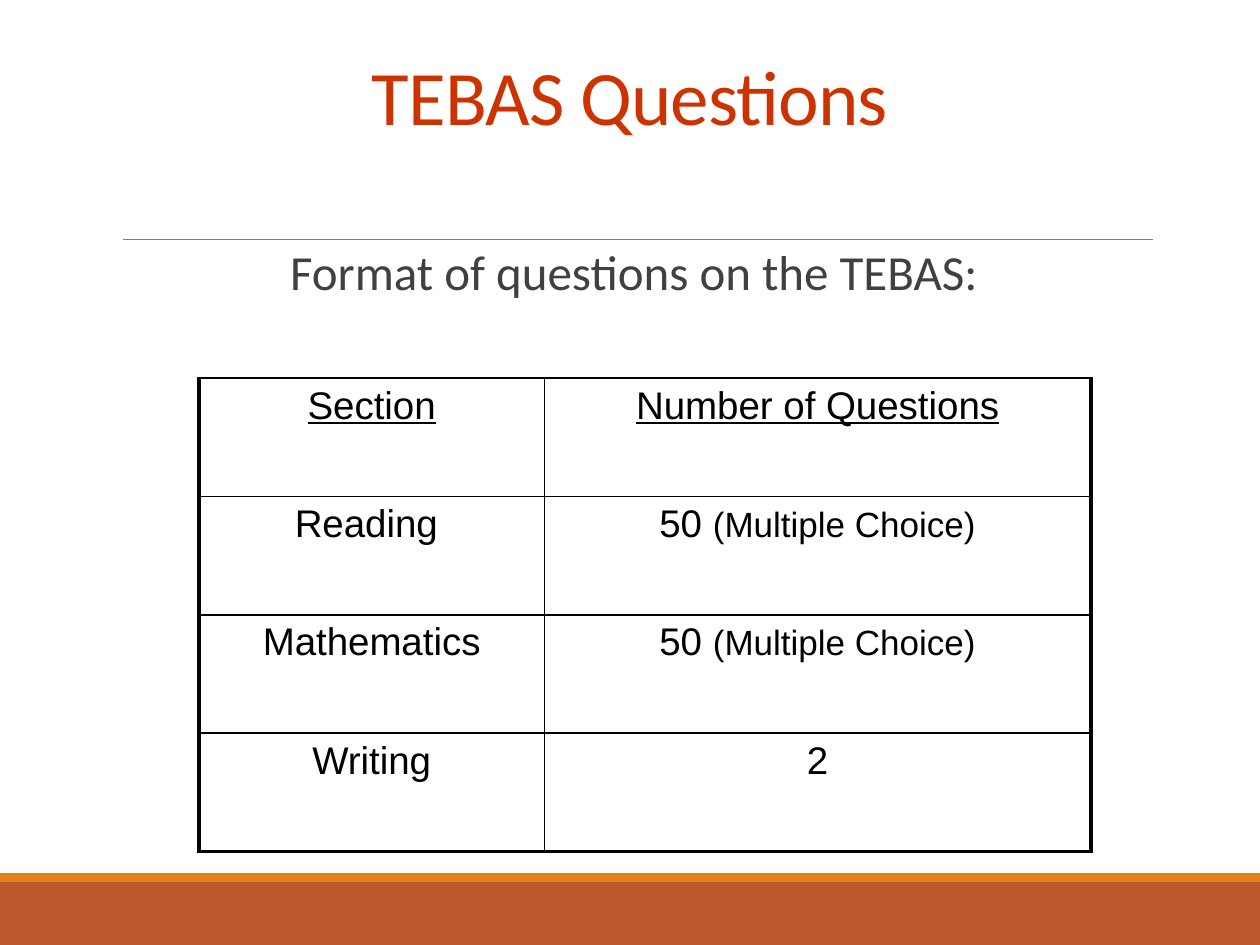
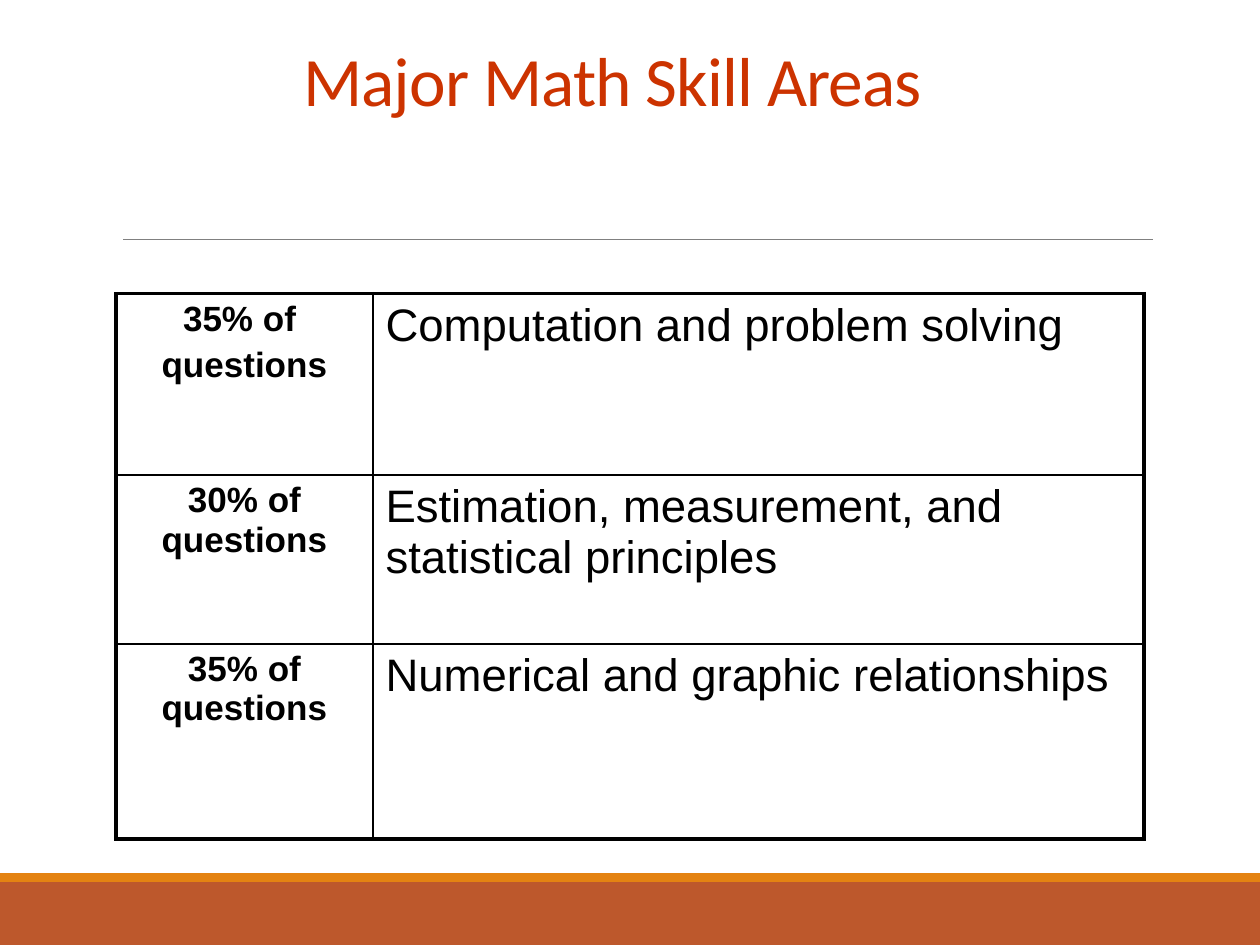
from dataclasses import dataclass

import pptx
import pptx.dml.color
import pptx.enum.shapes
import pptx.enum.text
import pptx.oxml
import pptx.oxml.ns
import pptx.presentation
import pptx.shapes.autoshape
import pptx.slide
import pptx.table
import pptx.text.text
import pptx.util
from pptx.util import Inches

RUST, AMBER, GREY = "BD582C", "E48312", "808080"
TITLE_RED, BODY_GREY, BLACK = "CC3300", "404040", "000000"
HEADING_FONT, TABLE_FONT = "Calibri", "Arial"
THICK, THIN = 2.25, 1.0
CENTER = pptx.enum.text.PP_ALIGN.CENTER
LEFT = pptx.enum.text.PP_ALIGN.LEFT
ANCHOR = pptx.enum.text.MSO_ANCHOR
EXAM = "TEBAS"


@dataclass(frozen=True)
class Box:
    left: float
    top: float
    width: float
    height: float

    def emu(self) -> tuple[int, int, int, int]:
        return Inches(self.left), Inches(self.top), Inches(self.width), Inches(self.height)


@dataclass(frozen=True)
class Piece:
    text: str
    size: float
    bold: bool = False
    underline: bool = False


@dataclass(frozen=True)
class Cell:
    """Each paragraph is a tuple of differently formatted pieces."""
    paragraphs: tuple[tuple[Piece, ...], ...]
    align: int = CENTER


@dataclass(frozen=True)
class Grid:
    left: float
    top: float
    columns: tuple[float, ...]
    rows: tuple[float, ...]
    cells: tuple[tuple[Cell, ...], ...]
    top_border: float = THICK


@dataclass(frozen=True)
class Band:
    box: Box
    color: str


BANDS = (Band(Box(0, 7, 10, 0.5), RUST), Band(Box(0, 6.93, 10, 0.07), AMBER))


def rgb(color: str) -> pptx.dml.color.RGBColor:
    return pptx.dml.color.RGBColor.from_string(color)


def style(run: pptx.text.text._Run, font: str, size: float, color: str) -> None:
    run.font.name = font
    run.font.size = pptx.util.Pt(size)
    run.font.color.rgb = rgb(color)


def place(shape: pptx.shapes.autoshape.Shape, box: Box) -> None:
    shape.left, shape.top, shape.width, shape.height = box.emu()


def draw_frame(slide: pptx.slide.Slide) -> None:
    """Draw the bottom bands and the rule under the title."""
    for band in BANDS:
        shape = slide.shapes.add_shape(pptx.enum.shapes.MSO_SHAPE.RECTANGLE, *band.box.emu())
        shape.shadow.inherit = False
        shape.fill.solid()
        shape.fill.fore_color.rgb = rgb(band.color)
        shape.line.fill.background()
    rule = slide.shapes.add_connector(
        pptx.enum.shapes.MSO_CONNECTOR.STRAIGHT,
        Inches(0.98), Inches(1.9), Inches(9.15), Inches(1.9))
    rule.line.color.rgb = rgb(GREY)
    rule.line.width = pptx.util.Pt(0.5)
    rule._element.spPr.append(pptx.oxml.parse_xml(
        f"<a:effectLst {pptx.oxml.ns.nsdecls('a')}/>"))


def write_title(slide: pptx.slide.Slide, text: str, box: Box, size: float, anchor: int) -> None:
    title = slide.shapes.title
    place(title, box)
    frame = title.text_frame
    frame.text = text
    frame.word_wrap = True
    frame.auto_size = pptx.enum.text.MSO_AUTO_SIZE.NONE
    frame.vertical_anchor = anchor
    paragraph = frame.paragraphs[0]
    paragraph.alignment = CENTER
    paragraph.line_spacing = 0.85
    style(paragraph.runs[0], HEADING_FONT, size, TITLE_RED)
    paragraph.runs[0].font._element.set("spc", "-50")


def write_body(slide: pptx.slide.Slide, text: str, box: Box) -> None:
    body = slide.placeholders[1]
    place(body, box)
    frame = body.text_frame
    frame.text = text
    frame.auto_size = pptx.enum.text.MSO_AUTO_SIZE.NONE
    frame.margin_left = frame.margin_right = 0
    paragraph = frame.paragraphs[0]
    paragraph.alignment = CENTER
    paragraph.line_spacing = 0.9
    paragraph.space_before = pptx.util.Pt(12)
    paragraph.space_after = pptx.util.Pt(2)
    style(paragraph.runs[0], HEADING_FONT, 28, BODY_GREY)
    properties = paragraph._p.get_or_add_pPr()
    properties.set("marL", str(Inches(0.1)))
    properties.set("indent", str(Inches(-0.1)))
    properties.append(pptx.oxml.parse_xml(f"<a:buNone {pptx.oxml.ns.nsdecls('a')}/>"))


def set_borders(cell: pptx.table._Cell, widths: dict[str, float]) -> None:
    """Add border lines; the keys must run in the order L, R, T, B."""
    properties = cell._tc.get_or_add_tcPr()
    for side, width in widths.items():
        properties.append(pptx.oxml.parse_xml(
            f'<a:ln{side} {pptx.oxml.ns.nsdecls("a")} w="{pptx.util.Pt(width)}">'
            f'<a:solidFill><a:srgbClr val="{BLACK}"/></a:solidFill></a:ln{side}>'))


def write_cell(target: pptx.table._Cell, cell: Cell) -> None:
    frame = target.text_frame
    for index, pieces in enumerate(cell.paragraphs):
        paragraph = frame.add_paragraph() if index else frame.paragraphs[0]
        paragraph.alignment = cell.align
        paragraph.space_before = pptx.util.Pt(0.2 * pieces[0].size)
        for piece in pieces:
            run = paragraph.add_run()
            run.text = piece.text
            style(run, TABLE_FONT, piece.size, BLACK)
            run.font.bold = piece.bold
            run.font.underline = piece.underline


def draw_grid(slide: pptx.slide.Slide, grid: Grid) -> None:
    box = Box(grid.left, grid.top, sum(grid.columns), sum(grid.rows))
    last_row, last_column = len(grid.rows) - 1, len(grid.columns) - 1
    table = slide.shapes.add_table(last_row + 1, last_column + 1, *box.emu()).table
    table.first_row = table.horz_banding = False
    for column, width in zip(table.columns, grid.columns):
        column.width = Inches(width)
    for row, height in zip(table.rows, grid.rows):
        row.height = Inches(height)
    for r, cells in enumerate(grid.cells):
        for c, cell in enumerate(cells):
            target = table.cell(r, c)
            write_cell(target, cell)
            set_borders(target, {
                "L": THIN if c else THICK,
                "R": THICK if c == last_column else THIN,
                "T": THIN if r else grid.top_border,
                "B": THICK if r == last_row else THIN,
            })
            target.fill.background()


def line(text: str, size: float = 22, underline: bool = False) -> Cell:
    return Cell(((Piece(text, size, underline=underline),),))


def share(*lines: str) -> Cell:
    return Cell(tuple((Piece(text, 20, bold=True),) for text in lines))


def skill(text: str) -> Cell:
    return Cell(((Piece(text, 26),),), LEFT)


MULTIPLE_CHOICE = Cell(((Piece("50 ", 22), Piece("(Multiple Choice)", 20)),))

QUESTION_COUNTS = Grid(
    1.58, 3, (2.74, 4.34), (0.94,) * 4,
    (
        (line("Section", underline=True), line("Number of Questions", underline=True)),
        (line("Reading "), MULTIPLE_CHOICE),
        (line("Mathematics"), MULTIPLE_CHOICE),
        (line("Writing"), line("2")),
    ),
    top_border=THIN,
)

SKILL_AREAS = Grid(
    0.92, 2.33, (2.04, 6.12), (1.44, 1.34, 1.55),
    (
        (share("35% of ", "questions"), skill("Computation and problem solving")),
        (share("30% of questions"), skill("Estimation, measurement, and statistical principles")),
        (share("35% of questions"), skill("Numerical and graphic relationships")),
    ),
)


def add_slide(deck: pptx.presentation.Presentation, layout: str) -> pptx.slide.Slide:
    slide = deck.slides.add_slide(deck.slide_layouts.get_by_name(layout))
    draw_frame(slide)
    return slide


def main() -> None:
    deck = pptx.Presentation()
    deck.slide_width, deck.slide_height = Inches(10), Inches(7.5)

    questions = add_slide(deck, "Title and Content")
    write_title(questions, f"{EXAM} Questions", Box(0.5, 0.5, 9, 0.67), 44, ANCHOR.BOTTOM)
    write_body(questions, f"Format of questions on the {EXAM}:", Box(1.08, 1.92, 7.9, 4.63))
    draw_grid(questions, QUESTION_COUNTS)

    skills = add_slide(deck, "Title Only")
    write_title(skills, "Major Math Skill Areas ", Box(0.67, 0.35, 8.5, 1.25), 39.6, ANCHOR.TOP)
    draw_grid(skills, SKILL_AREAS)

    deck.save("out.pptx")


if __name__ == "__main__":
    main()
